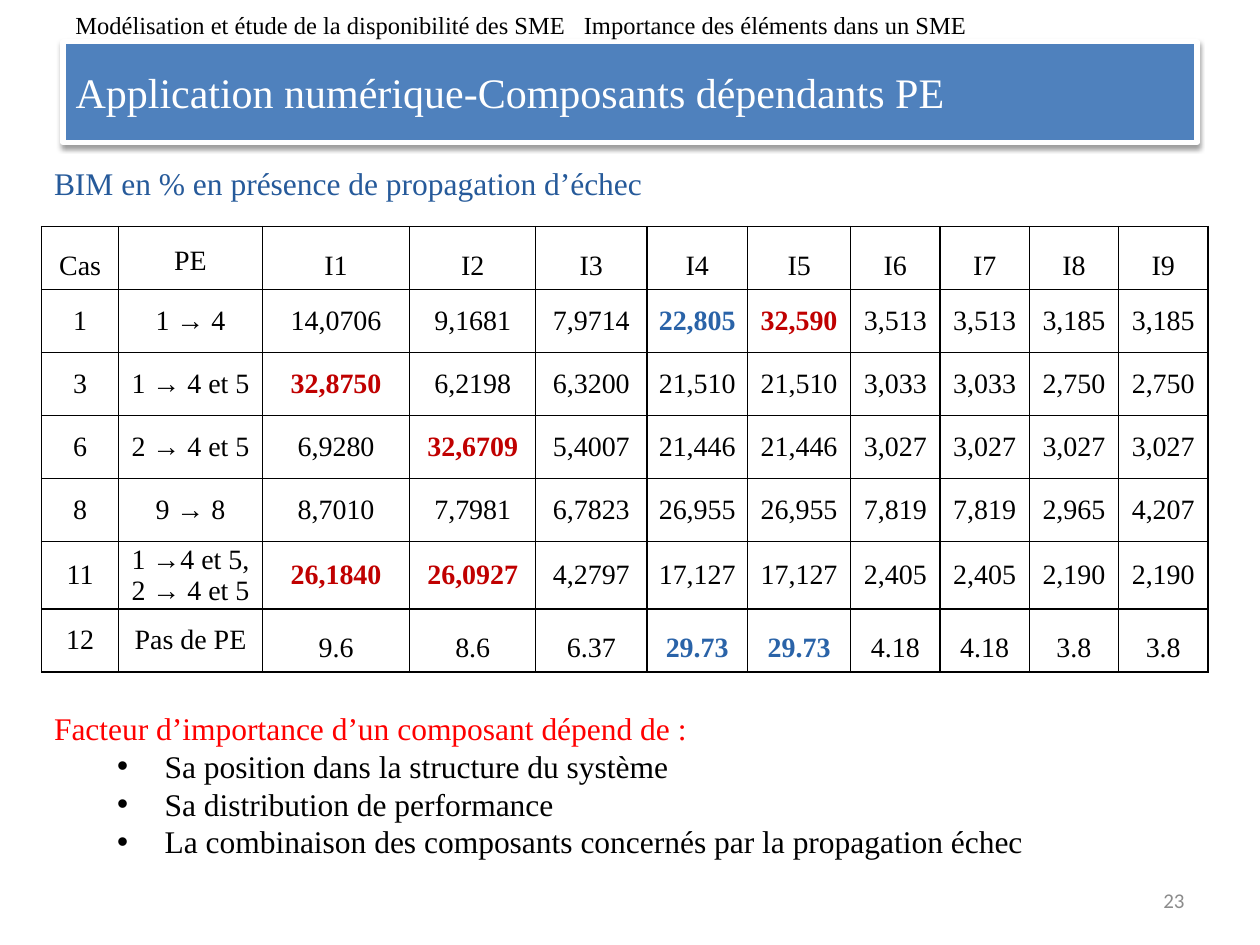
from lxml import etree
from pptx import Presentation
from pptx.dml.color import RGBColor
from pptx.enum.text import MSO_ANCHOR, MSO_AUTO_SIZE, PP_ALIGN
from pptx.oxml.ns import qn
from pptx.util import Cm, Pt

MIDDLE, TOP = MSO_ANCHOR.MIDDLE, MSO_ANCHOR.TOP
LEFT, CENTER, RIGHT = PP_ALIGN.LEFT, PP_ALIGN.CENTER, PP_ALIGN.RIGHT
NO_AUTOFIT = MSO_AUTO_SIZE.NONE

BLACK = RGBColor(0x00, 0x00, 0x00)
WHITE = RGBColor(0xFF, 0xFF, 0xFF)
GREY = RGBColor(0x8C, 0x8C, 0x8C)
BANNER_BLUE = RGBColor(0x4F, 0x81, 0xBD)
HEADING_BLUE = RGBColor(0x26, 0x5A, 0x9A)
MARK_BLUE = RGBColor(0x2A, 0x63, 0xA8)
MARK_RED = RGBColor(0xC0, 0x00, 0x00)
RED = RGBColor(0xFF, 0x00, 0x00)
SERIF, SANS = "Times New Roman", "Calibri"

COLUMN_WIDTHS = [1.55, 2.9, 2.97, 2.54, 2.24, 2.03, 2.08] + [1.8] * 4
ROW_HEIGHT = 1.27
IMPORTANCE_ROWS = [
    ["Cas", "PE"] + [f"I{number}" for number in range(1, 10)],
    ["1", "1 → 4", "14,0706", "9,1681", "7,9714", "22,805", "32,590",
     "3,513", "3,513", "3,185", "3,185"],
    ["3", "1 → 4 et 5", "32,8750", "6,2198", "6,3200", "21,510", "21,510",
     "3,033", "3,033", "2,750", "2,750"],
    ["6", "2 → 4 et 5", "6,9280", "32,6709", "5,4007", "21,446", "21,446",
     "3,027", "3,027", "3,027", "3,027"],
    ["8", "9 → 8", "8,7010", "7,7981", "6,7823", "26,955", "26,955",
     "7,819", "7,819", "2,965", "4,207"],
    ["11", "1 →4 et 5, 2 → 4 et 5", "26,1840", "26,0927", "4,2797", "17,127",
     "17,127", "2,405", "2,405", "2,190", "2,190"],
    ["12", "Pas de PE", "9.6", "8.6", "6.37", "29.73", "29.73",
     "4.18", "4.18", "3.8", "3.8"],
]
# Highlighted values by (row, column)
MARKS = {
    (1, 5): MARK_BLUE, (1, 6): MARK_RED, (2, 2): MARK_RED, (3, 3): MARK_RED,
    (5, 2): MARK_RED, (5, 3): MARK_RED, (6, 5): MARK_BLUE, (6, 6): MARK_BLUE,
}
FACTORS = [
    "Sa position dans la structure du système",
    "Sa distribution de performance",
    "La combinaison des composants concernés par la propagation échec",
]


def add_span(para, text, size, color, font=SERIF, bold=False):
    span = para.add_run()
    span.text = text
    span.font.size = Pt(size)
    span.font.name = font
    span.font.bold = bold
    span.font.color.rgb = color


def add_text_box(page, left, top, width, height, anchor=TOP):
    box = page.shapes.add_textbox(Cm(left), Cm(top), Cm(width), Cm(height))
    frame = box.text_frame
    frame.word_wrap = True
    frame.vertical_anchor = anchor
    return frame


def add_bullet(para, left, hanging):
    properties = para._p.get_or_add_pPr()
    properties.set("marL", str(Cm(left)))
    properties.set("indent", str(-Cm(hanging)))
    etree.SubElement(properties, qn("a:buFont"), typeface="Arial")
    etree.SubElement(properties, qn("a:buChar"), char="•")


def add_tab_stop(para, position):
    stops = etree.SubElement(para._p.get_or_add_pPr(), qn("a:tabLst"))
    etree.SubElement(stops, qn("a:tab"), pos=str(Cm(position)), algn="l")


def add_shadow(shape):
    effects = etree.SubElement(shape._element.spPr, qn("a:effectLst"))
    shadow = etree.SubElement(
        effects, qn("a:outerShdw"), blurRad=str(Pt(3.1)), dist=str(Pt(1.6)),
        dir="5400000", rotWithShape="0")
    color = etree.SubElement(shadow, qn("a:srgbClr"), val=str(BLACK))
    etree.SubElement(color, qn("a:alpha"), val="38000")


def set_borders(cell):
    properties = cell._tc.get_or_add_tcPr()
    for side in ("lnL", "lnR", "lnT", "lnB"):
        line = etree.SubElement(properties, qn(f"a:{side}"), w=str(Pt(1)))
        fill = etree.SubElement(line, qn("a:solidFill"))
        etree.SubElement(fill, qn("a:srgbClr"), val=str(BLACK))


def format_title(title, text):
    title.left, title.top = Cm(1.27), Cm(0.84)
    title.width, title.height = Cm(22.86), Cm(2.03)
    title.fill.solid()
    title.fill.fore_color.rgb = BANNER_BLUE
    title.line.color.rgb = WHITE
    title.line.width = Pt(3)
    add_shadow(title)
    frame = title.text_frame
    frame.auto_size = NO_AUTOFIT
    frame.vertical_anchor = MIDDLE
    para = frame.paragraphs[0]
    para.alignment = LEFT
    add_span(para, text, 24, WHITE)


def line_spacing(row, column):
    if row == 0:
        return 1.15 if column == 1 else 1.5
    last_row = len(IMPORTANCE_ROWS) - 1
    return 1.5 if row == last_row and column > 1 else 1.0


def add_importance_table(page):
    row_count = len(IMPORTANCE_ROWS)
    table = page.shapes.add_table(
        row_count, len(COLUMN_WIDTHS), Cm(0.84), Cm(4.57),
        Cm(sum(COLUMN_WIDTHS)), Cm(ROW_HEIGHT * row_count)).table
    table.first_row = False
    table.horz_banding = False
    for column, width in zip(table.columns, COLUMN_WIDTHS):
        column.width = Cm(width)
    for row, values in enumerate(IMPORTANCE_ROWS):
        table.rows[row].height = Cm(ROW_HEIGHT)
        for column, value in enumerate(values):
            cell = table.cell(row, column)
            set_borders(cell)
            cell.fill.background()
            cell.margin_left = cell.margin_right = Cm(0.18)
            cell.margin_top = cell.margin_bottom = Cm(0)
            cell.vertical_anchor = MIDDLE
            para = cell.text_frame.paragraphs[0]
            para.alignment = CENTER
            para.line_spacing = line_spacing(row, column)
            mark = MARKS.get((row, column))
            add_span(para, value, 16, mark or BLACK, bold=mark is not None)


def main():
    deck = Presentation()
    deck.slide_width, deck.slide_height = Cm(25.4), Cm(19.05)
    page = deck.slides.add_slide(deck.slide_layouts[5])

    # Title banner
    format_title(page.shapes.title,
                 "Application numérique-Composants dépendants PE")

    # Page number
    para = add_text_box(page, 18.2, 17.65, 5.93, 1.01, MIDDLE).paragraphs[0]
    para.alignment = RIGHT
    add_span(para, "23", 12, GREY, SANS)

    # Running header, with the section after a tab
    para = add_text_box(page, 1.27, 0, 20.96, 1.01, MIDDLE).paragraphs[0]
    add_tab_stop(para, 10.25)
    add_span(para, "Modélisation et étude de la disponibilité des SME\t", 14, BLACK)
    add_span(para, "Importance des éléments dans un SME", 14, BLACK)

    # Table and its heading
    add_importance_table(page)
    heading = add_text_box(page, 0.84, 3.18, 15.67, 1.02).paragraphs[0]
    add_span(heading, "BIM en % en présence de propagation d’échec", 18, HEADING_BLUE)

    # Conclusion with its list of factors
    frame = add_text_box(page, 0.84, 14.17, 23.5, 3.33)
    add_span(frame.paragraphs[0],
             "Facteur d’importance d’un composant dépend de :", 18, RED)
    for factor in FACTORS:
        para = frame.add_paragraph()
        para.level = 1
        add_bullet(para, 2.23, 0.96)
        add_span(para, factor, 18, BLACK)

    deck.save("out.pptx")


if __name__ == "__main__":
    main()
